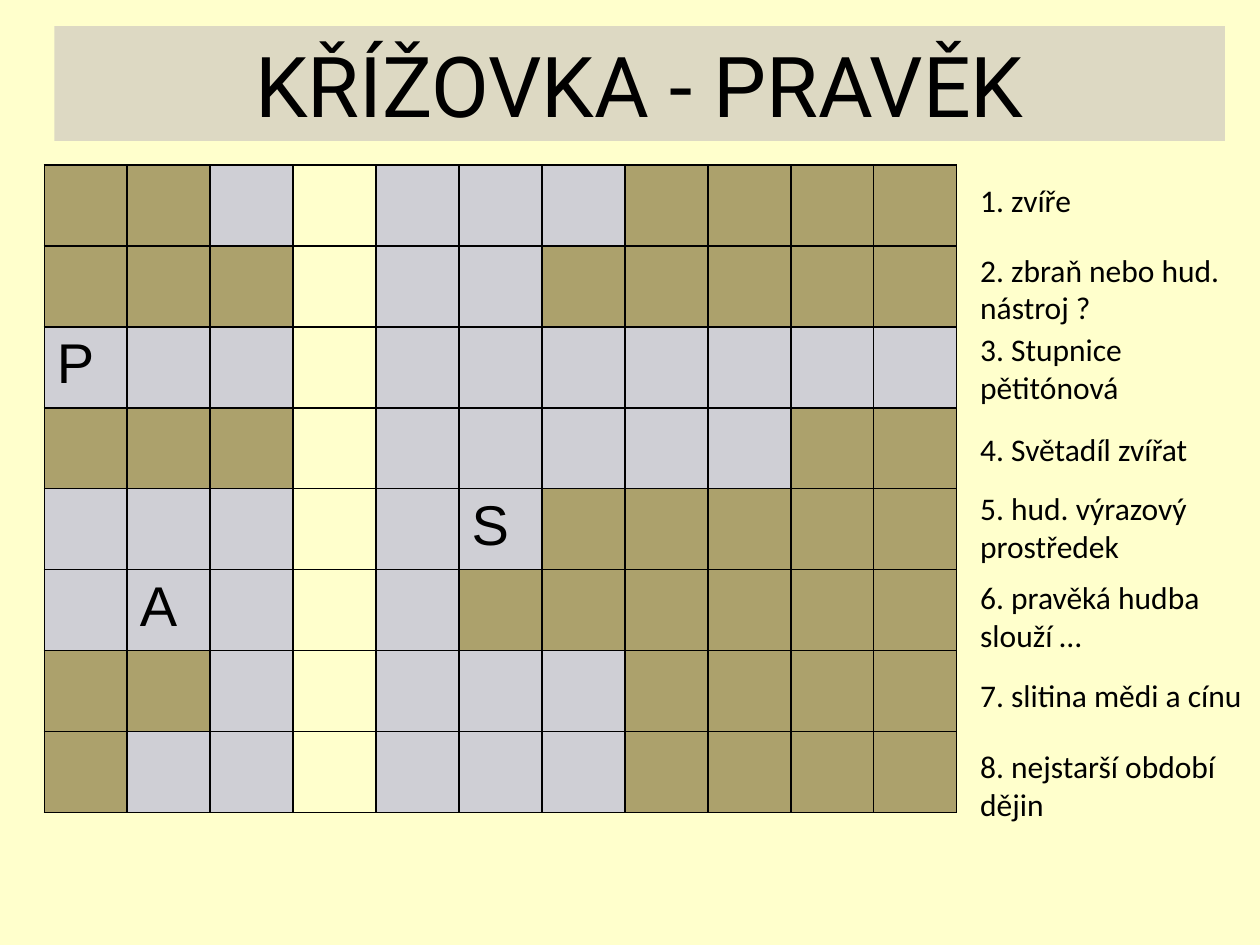
from dataclasses import dataclass

from lxml.etree import SubElement
from pptx import Presentation
from pptx.dml.color import RGBColor
from pptx.enum.shapes import MSO_SHAPE
from pptx.enum.text import MSO_ANCHOR, MSO_AUTO_SIZE, PP_ALIGN
from pptx.oxml.ns import qn
from pptx.util import Pt


@dataclass(frozen=True)
class Theme:
    background: str = "FFFFCC"
    banner: str = "DDD9C3"
    blocked: str = "ACA16C"
    answer: str = "CFCFD5"
    solution: str = "FFFFCC"
    ink: str = "000000"
    title_size: int = 48
    letter_size: int = 32
    clue_size: int = 18


THEME = Theme()
COLUMNS = 11
SOLUTION_COLUMN = 3
COLUMN_WIDTH, ROW_HEIGHT = 47.4, 46.26

# First and last column of each answer
ANSWERS = [(2, 6), (3, 5), (0, 10), (3, 8), (0, 5), (0, 4), (2, 6), (1, 6)]
# Letters given as help, by (row, column)
HINTS = {(2, 0): "P", (4, 5): "S", (5, 1): "A"}
# Clue, top, width, height
CLUES = [
    ("1. zvíře", 100, 167, 29),
    ("2. zbraň nebo hud. nástroj ?", 139.7, 167, 51),
    ("3. Stupnice pětitónová", 185, 130, 51),
    ("4. Světadíl zvířat", 242, 167, 29),
    ("5. hud. výrazový prostředek", 275.8, 145, 51),
    ("6. pravěká hudba slouží …", 327, 167, 51),
    ("7. slitina mědi a cínu", 383, 167, 29),
    ("8. nejstarší období dějin", 423.4, 167, 51),
]


def write(frame, text, font_name, size, align=PP_ALIGN.LEFT):
    paragraph = frame.paragraphs[0]
    paragraph.text = text
    paragraph.alignment = align
    paragraph.font.name = font_name
    paragraph.font.size = Pt(size)
    paragraph.font.color.rgb = RGBColor.from_string(THEME.ink)


def paint(fill, color):
    fill.solid()
    fill.fore_color.rgb = RGBColor.from_string(color)


def add_banner(slide, text):
    banner = slide.shapes.add_shape(
        MSO_SHAPE.RECTANGLE, Pt(31), Pt(15), Pt(669), Pt(65.5))
    banner.shadow.inherit = False
    paint(banner.fill, THEME.banner)
    banner.line.fill.background()
    banner.text_frame.vertical_anchor = MSO_ANCHOR.MIDDLE
    write(banner.text_frame, text, "Roboto", THEME.title_size, PP_ALIGN.CENTER)


def add_borders(cell):
    properties = cell._tc.get_or_add_tcPr()
    for position, side in enumerate(("a:lnL", "a:lnR", "a:lnT", "a:lnB")):
        border = SubElement(properties, qn(side), w=str(Pt(1)))
        fill = SubElement(border, qn("a:solidFill"))
        SubElement(fill, qn("a:srgbClr"), val=THEME.ink)
        properties.remove(border)
        properties.insert(position, border)  # borders precede the cell fill


def cell_color(column, first, last):
    if column == SOLUTION_COLUMN:
        return THEME.solution
    return THEME.answer if first <= column <= last else THEME.blocked


def add_crossword(slide):
    crossword = slide.shapes.add_table(
        len(ANSWERS), COLUMNS, Pt(25.3), Pt(94.3),
        Pt(COLUMNS * COLUMN_WIDTH), Pt(len(ANSWERS) * ROW_HEIGHT)).table
    crossword.first_row = crossword.horz_banding = False
    for column in crossword.columns:
        column.width = Pt(COLUMN_WIDTH)
    for row_index, (first, last) in enumerate(ANSWERS):
        crossword.rows[row_index].height = Pt(ROW_HEIGHT)
        for column_index in range(COLUMNS):
            cell = crossword.cell(row_index, column_index)
            paint(cell.fill, cell_color(column_index, first, last))
            add_borders(cell)
            letter = HINTS.get((row_index, column_index))
            if letter:
                write(cell.text_frame, letter, "Arial", THEME.letter_size)


def add_clue(slide, text, top, width, height):
    clue = slide.shapes.add_textbox(Pt(553), Pt(top), Pt(width), Pt(height))
    clue.text_frame.word_wrap = True
    clue.text_frame.auto_size = MSO_AUTO_SIZE.SHAPE_TO_FIT_TEXT
    write(clue.text_frame, text, "Calibri", THEME.clue_size)


def main():
    presentation = Presentation()
    presentation.slide_width, presentation.slide_height = Pt(720), Pt(540)
    slide = presentation.slides.add_slide(presentation.slide_layouts[6])
    paint(slide.background.fill, THEME.background)

    # Title, crossword grid, then the clues beside it
    add_banner(slide, "KŘÍŽOVKA - PRAVĚK")
    add_crossword(slide)
    for clue in CLUES:
        add_clue(slide, *clue)

    presentation.save("out.pptx")


if __name__ == "__main__":
    main()
